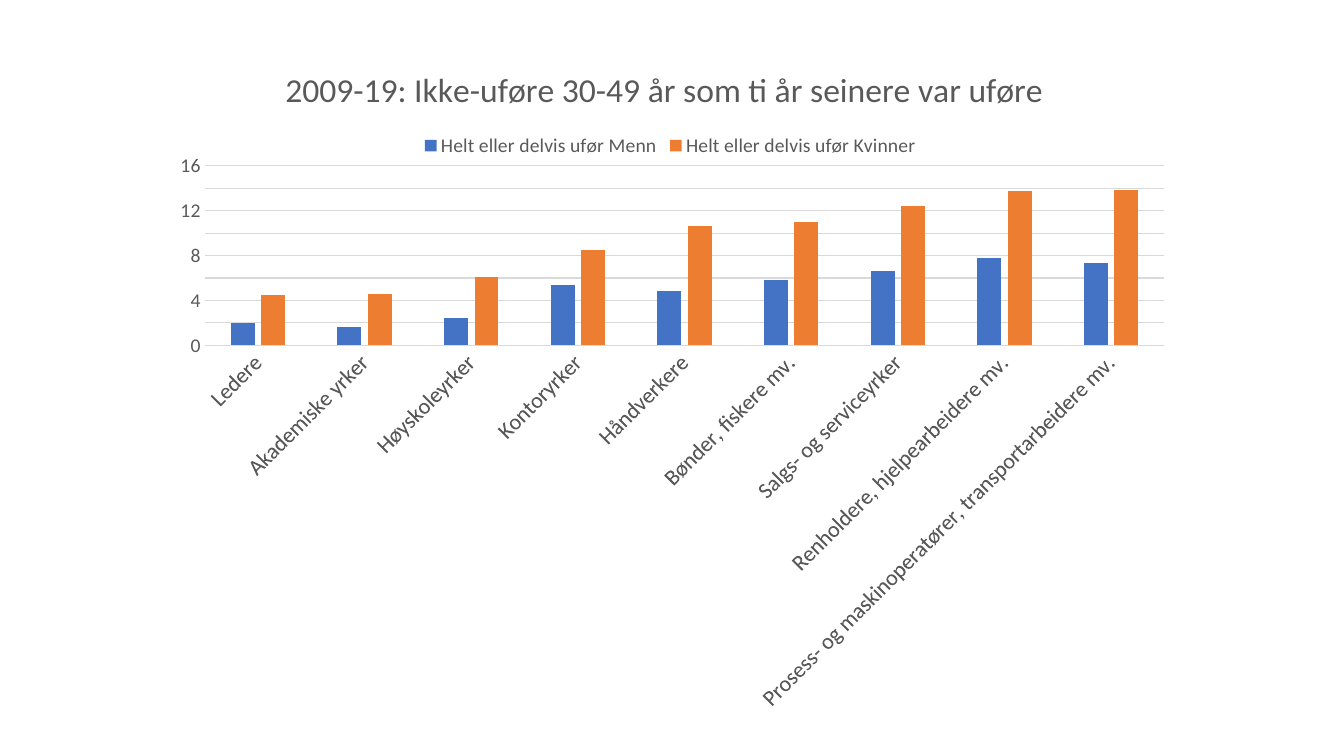
"""Build a slide with a column chart of disability by occupation and sex."""
from lxml.etree import SubElement
from pptx import Presentation
from pptx.chart.data import CategoryChartData
from pptx.dml.color import RGBColor
from pptx.enum.chart import XL_CHART_TYPE, XL_LEGEND_POSITION, XL_TICK_MARK
from pptx.oxml import parse_xml
from pptx.oxml.ns import nsdecls, qn
from pptx.util import Inches, Pt

TITLE = "2009-19: Ikke-uføre 30-49 år som ti år seinere var uføre"
SERIES_NAMES = ("Helt eller delvis ufør Menn", "Helt eller delvis ufør Kvinner")
OCCUPATIONS = [
    ("Ledere", 2, 4.5),
    ("Akademiske yrker", 1.6, 4.6),
    ("Høyskoleyrker", 2.4, 6.1),
    ("Kontoryrker", 5.4, 8.5),
    ("Håndverkere", 4.8, 10.6),
    ("Bønder, fiskere mv.", 5.8, 11),
    ("Salgs- og serviceyrker", 6.6, 12.4),
    ("Renholdere, hjelpearbeidere mv.", 7.8, 13.7),
    ("Prosess- og maskinoperatører, transportarbeidere mv.", 7.3, 13.8),
]

THEME = {
    "font": "Calibri",
    "text": RGBColor.from_string("595959"),
    "line": RGBColor.from_string("D9D9D9"),
    "series": [RGBColor.from_string(color) for color in ("4472C4", "ED7D31")],
    "title_size": 24,
    "category_size": 16,
    "small_size": 14,
}
SLIDE_SIZE = (13.33, 7.5)
CHART_BOX = (1.59, 0.43, 10.16, 6.63)
PLACES = {
    "title": {"x": 1.18, "y": 0.18},
    "legend": {"x": 2.56, "y": 0.87, "w": 5, "h": 0.3},
    "plotArea": {"x": 0.2, "y": 1.22, "w": 9.76, "h": 5.38},
}


def set_values(target, values):
    for name, value in values.items():
        setattr(target, name, value)


def set_font(font, size):
    set_values(font, {"name": THEME["font"], "size": Pt(size), "bold": False})
    font.color.rgb = THEME["text"]


def set_line(line):
    line.color.rgb = THEME["line"]
    line.width = Pt(0.75)


def place(chart, part, box):
    element = chart.element.find(".//" + qn(f"c:{part}"))
    for layout in element.findall(qn("c:layout")):
        element.remove(layout)
    layout = parse_xml(f"<c:layout {nsdecls('c')}><c:manualLayout/></c:layout>")
    manual = layout[0]
    if part == "plotArea":
        SubElement(manual, qn("c:layoutTarget")).set("val", "outer")
    for key in ("x", "y"):
        SubElement(manual, qn(f"c:{key}Mode")).set("val", "edge")
    for key, length in box.items():
        total = CHART_BOX[2] if key in "xw" else CHART_BOX[3]
        SubElement(manual, qn(f"c:{key}")).set("val", str(round(length / total, 4)))
    element.insert(0 if part == "plotArea" else 1, layout)


def add_occupation_chart(slide):
    data = CategoryChartData()
    categories, *columns = zip(*OCCUPATIONS)
    data.categories = categories
    for name, values in zip(SERIES_NAMES, columns):
        data.add_series(name, values)
    box = [Inches(length) for length in CHART_BOX]
    return slide.shapes.add_chart(XL_CHART_TYPE.COLUMN_CLUSTERED, *box, data).chart


def format_chart(chart):
    set_font(chart.font, THEME["small_size"])
    title_frame = chart.chart_title.text_frame
    title_frame.text = TITLE
    set_font(title_frame.paragraphs[0].runs[0].font, THEME["title_size"])

    chart.has_legend = True
    set_values(chart.legend, {"position": XL_LEGEND_POSITION.TOP, "include_in_layout": False})
    set_font(chart.legend.font, THEME["small_size"])

    plot = chart.plots[0]
    set_values(plot, {"gap_width": 219, "overlap": -27, "vary_by_categories": False})
    for series, color in zip(plot.series, THEME["series"]):
        series.format.fill.solid()
        series.format.fill.fore_color.rgb = color

    category_axis, value_axis = chart.category_axis, chart.value_axis
    for axis, size in ((category_axis, "category_size"), (value_axis, "small_size")):
        set_values(axis, {"major_tick_mark": XL_TICK_MARK.NONE,
                          "minor_tick_mark": XL_TICK_MARK.NONE})
        set_font(axis.tick_labels.font, THEME[size])
    set_line(category_axis.format.line)
    label_body = chart.element.find(".//" + qn("c:catAx")).find(".//" + qn("a:bodyPr"))
    label_body.set("rot", "-2700000")
    set_values(value_axis, {"minimum_scale": 0, "maximum_scale": 16, "major_unit": 2})
    value_axis.format.line.fill.background()
    set_line(value_axis.major_gridlines.format.line)

    for part, box in PLACES.items():
        place(chart, part, box)


def main():
    presentation = Presentation()
    width, height = SLIDE_SIZE
    set_values(presentation, {"slide_width": Inches(width), "slide_height": Inches(height)})
    slide = presentation.slides.add_slide(presentation.slide_layouts[6])
    format_chart(add_occupation_chart(slide))
    presentation.save("out.pptx")


if __name__ == "__main__":
    main()
